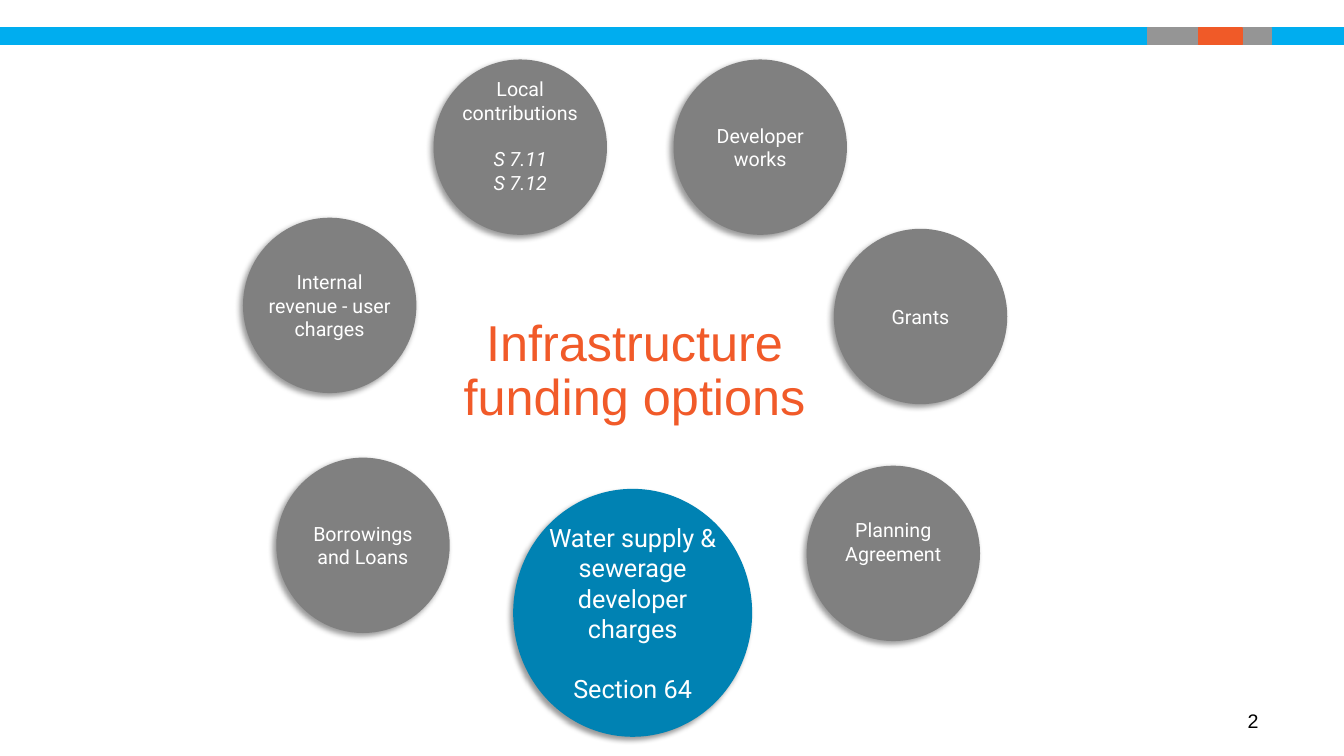
"""Build a slide with a ring of infrastructure funding options."""
from lxml import etree
from pptx import Presentation
from pptx.dml.color import RGBColor
from pptx.enum.shapes import MSO_SHAPE
from pptx.enum.text import MSO_ANCHOR, MSO_AUTO_SIZE, PP_ALIGN
from pptx.oxml.ns import qn
from pptx.util import Pt

PX = 9144
GREY, BLUE = "808080", "0082B3"


def paint(part, color):
    part.solid()
    part.fore_color.rgb = RGBColor.from_string(color)


def write(frame, lines, style, align, sides, space=None):
    frame.word_wrap = True
    frame.auto_size = MSO_AUTO_SIZE.NONE
    frame.vertical_anchor = MSO_ANCHOR.MIDDLE
    names = ("margin_left", "margin_top", "margin_right", "margin_bottom")
    for name, side in zip(names, sides):
        setattr(frame, name, side * PX)
    for i, (text, gap, slant) in enumerate(lines):
        para = frame.paragraphs[0] if i == 0 else frame.add_paragraph()
        para.alignment = align
        para.space_before = Pt(gap)
        para.line_spacing = space
        run = para.add_run()
        run.text = text
        look = {"name": style[0], "size": Pt(style[1]), "italic": slant, "bold": False}
        for key, value in look.items():
            setattr(run.font, key, value)
        paint(run.font.fill, style[2])


deck = Presentation()
deck.slide_width, deck.slide_height = 1333 * PX, 750 * PX
slide = deck.slides.add_slide(deck.slide_layouts[5])
shapes = slide.shapes

for left, width, color in [(0, 1333, "00ADEF"), (1138, 123, "959595"), (1189, 43, "F05A28")]:
    bar = shapes.add_shape(MSO_SHAPE.RECTANGLE, left * PX, 28 * PX, width * PX, 16 * PX)
    bar.shadow.inherit = False
    paint(bar.fill, color)
    paint(bar.line.fill, color)
    bar.line.width = Pt(1)

title = shapes.title
place = {"left": 413, "top": 306, "width": 433, "height": 126}
for key, value in place.items():
    setattr(title, key, value * PX)
write(title.text_frame, [("Infrastructure funding options", 0, False)],
      ("Arial", 36, "F15A29"), PP_ALIGN.CENTER, (10, 5, 10, 5), 0.9)

page = shapes.add_textbox(1115 * PX, 695 * PX, 143 * PX, 40 * PX)
write(page.text_frame, [("2", 0, False)], ("Arial", 14, "000000"),
      PP_ALIGN.RIGHT, (10, 5, 10, 5))

SMALL, LARGE = (172, 174, GREY, 14), (237, 246, BLUE, 18)
FLUSH, RAISED = (0, 0, 0, 0), (0, 0, 0, 23)
rings = [
    (509, 485, LARGE, FLUSH, [("Water supply & sewerage developer charges", 0, False),
                              ("Section 64", 21, False)]),
    (668, 59, SMALL, (10, 5, 10, 5), [("Developer works", 0, False)]),
    (827, 227, SMALL, FLUSH, [("Grants", 0, False)]),
    (430, 59, SMALL, RAISED, [("Local contributions", 0, False),
                              ("S 7.11", 16.5, True), ("S 7.12", 0, True)]),
    (274, 454, SMALL, FLUSH, [("Borrowings and Loans", 0, False)]),
    (241, 216, SMALL, FLUSH, [("Internal revenue - user charges", 0, False)]),
    (800, 462, SMALL, RAISED, [("Planning Agreement", 0, False)]),
]
for left, top, (width, height, color, size), sides, lines in rings:
    ring = shapes.add_shape(MSO_SHAPE.FLOWCHART_CONNECTOR,
                            left * PX, top * PX, width * PX, height * PX)
    paint(ring.fill, color)
    ring.line.fill.background()
    ring.shadow.inherit = False
    glow = ring._element.spPr.find(qn("a:effectLst"))
    shade = etree.SubElement(glow, qn("a:outerShdw"), blurRad=str(Pt(4)), dist=str(Pt(3)),
                             dir="8100000", algn="tr", rotWithShape="0")
    tone = etree.SubElement(shade, qn("a:srgbClr"), val="000000")
    etree.SubElement(tone, qn("a:alpha"), val="40000")
    write(ring.text_frame, lines, ("Roboto", size, "FFFFFF"), PP_ALIGN.CENTER, sides)

deck.save("out.pptx")
